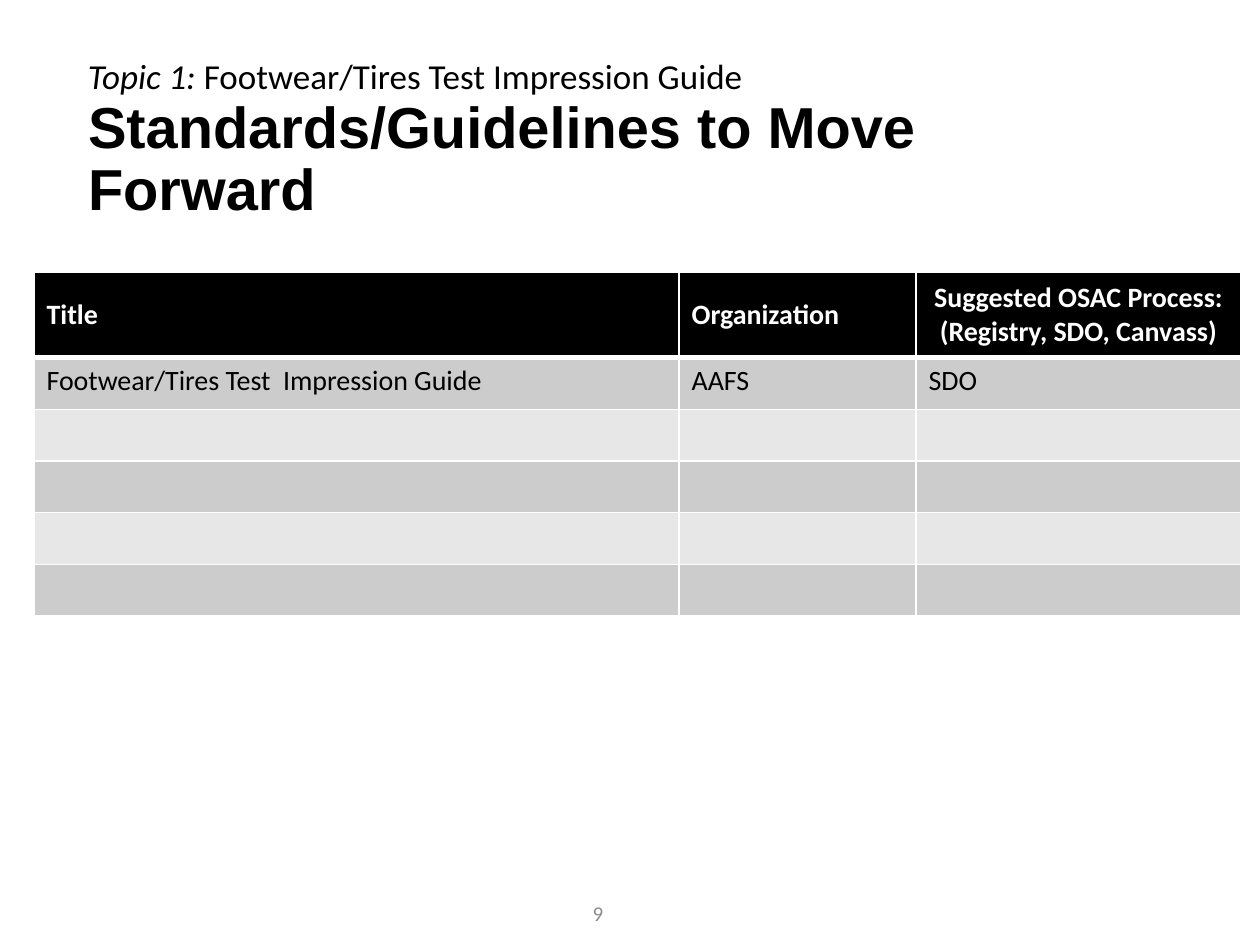
from dataclasses import dataclass

from lxml.etree import SubElement
from pptx import Presentation
from pptx.dml.color import RGBColor
from pptx.enum.text import MSO_ANCHOR, PP_ALIGN
from pptx.oxml.ns import qn
from pptx.util import Pt

BLACK, WHITE, GRAY = "000000", "FFFFFF", "8C8C8C"
BANDS = ("CCCCCC", "E7E7E7")
COLUMN_WIDTHS = (368.64, 135.36, 185.76)
HEADER_HEIGHT, ROW_HEIGHT = 48.96, 29.52
ROWS = (
    ("Title", "Organization", "Suggested OSAC Process: (Registry, SDO, Canvass)"),
    ("Footwear/Tires Test  Impression Guide", "AAFS", "SDO"),
    *[("", "", "")] * 4,
)


@dataclass
class Run:
    text: str
    italic: bool = False


@dataclass
class Label:
    left: float
    top: float
    width: float
    height: float
    runs: tuple[Run, ...]
    size: float
    font: str = "Calibri"
    color: str = BLACK
    bold: bool = False
    align: PP_ALIGN = PP_ALIGN.LEFT
    anchor: MSO_ANCHOR = MSO_ANCHOR.MIDDLE
    line_spacing: float = 1.0


LABELS = (
    Label(43.2, 39.6, 620.64, 104.4, (Run("Standards/Guidelines to Move Forward"),),
          33, "Arial", bold=True, line_spacing=0.9),
    Label(43.2, 27.36, 407.52, 31.68,
          (Run("Topic 1: ", True), Run("Footwear/Tires Test Impression Guide")),
          20, anchor=MSO_ANCHOR.TOP),
    Label(260.64, 507.6, 162, 28.8, (Run("9"),), 12, color=GRAY, align=PP_ALIGN.CENTER),
)


def rgb(color: str) -> RGBColor:
    return RGBColor.from_string(color)


def set_font(p, name: str, size: float, color: str, bold: bool) -> None:
    f = p.font
    f.name, f.size, f.bold = name, Pt(size), bold
    f.color.rgb = rgb(color)


def add_label(s, label: Label) -> None:
    sp = s.shapes.add_textbox(Pt(label.left), Pt(label.top), Pt(label.width), Pt(label.height))
    tf = sp.text_frame
    tf.word_wrap = True
    tf.vertical_anchor = label.anchor
    p = tf.paragraphs[0]
    p.alignment = label.align
    p.line_spacing = label.line_spacing
    set_font(p, label.font, label.size, label.color, label.bold)
    for run in label.runs:
        r = p.add_run()
        r.text = run.text
        r.font.italic = run.italic


def add_border(cell, side: str, width: float) -> None:
    ln = SubElement(cell._tc.get_or_add_tcPr(), qn(f"a:ln{side}"), w=str(Pt(width)))
    SubElement(SubElement(ln, qn("a:solidFill")), qn("a:srgbClr"), val=WHITE)


def style_cell(cell, row: int, column: int, text: str) -> None:
    header = row == 0
    widths = {"L": 1, "R": 1, "T": 3 if row == 1 else 1, "B": 3 if header else 1}
    for side, width in widths.items():
        add_border(cell, side, width)
    cell.fill.solid()
    cell.fill.fore_color.rgb = rgb(BLACK if header else BANDS[(row - 1) % 2])
    cell.vertical_anchor = MSO_ANCHOR.MIDDLE if header else MSO_ANCHOR.TOP
    cell.text = text
    p = cell.text_frame.paragraphs[0]
    p.alignment = PP_ALIGN.CENTER if header and column == 2 else PP_ALIGN.LEFT
    set_font(p, "Calibri", 16, WHITE if header else BLACK, header)


def add_standards_table(s, left: float, top: float) -> None:
    height = HEADER_HEIGHT + ROW_HEIGHT * (len(ROWS) - 1)
    table = s.shapes.add_table(len(ROWS), len(COLUMN_WIDTHS), Pt(left), Pt(top),
                               Pt(sum(COLUMN_WIDTHS)), Pt(height)).table
    for column, width in zip(table.columns, COLUMN_WIDTHS):
        column.width = Pt(width)
    for i, texts in enumerate(ROWS):
        table.rows[i].height = Pt(ROW_HEIGHT if i else HEADER_HEIGHT)
        for j, text in enumerate(texts):
            style_cell(table.cell(i, j), i, j, text)


def main() -> None:
    prs = Presentation()
    prs.slide_width, prs.slide_height = Pt(720), Pt(540)
    s = prs.slides.add_slide(prs.slide_layouts[6])
    title, *captions = LABELS
    add_label(s, title)
    add_standards_table(s, 19.44, 155.52)
    for caption in captions:
        add_label(s, caption)
    prs.save("out.pptx")


if __name__ == "__main__":
    main()
